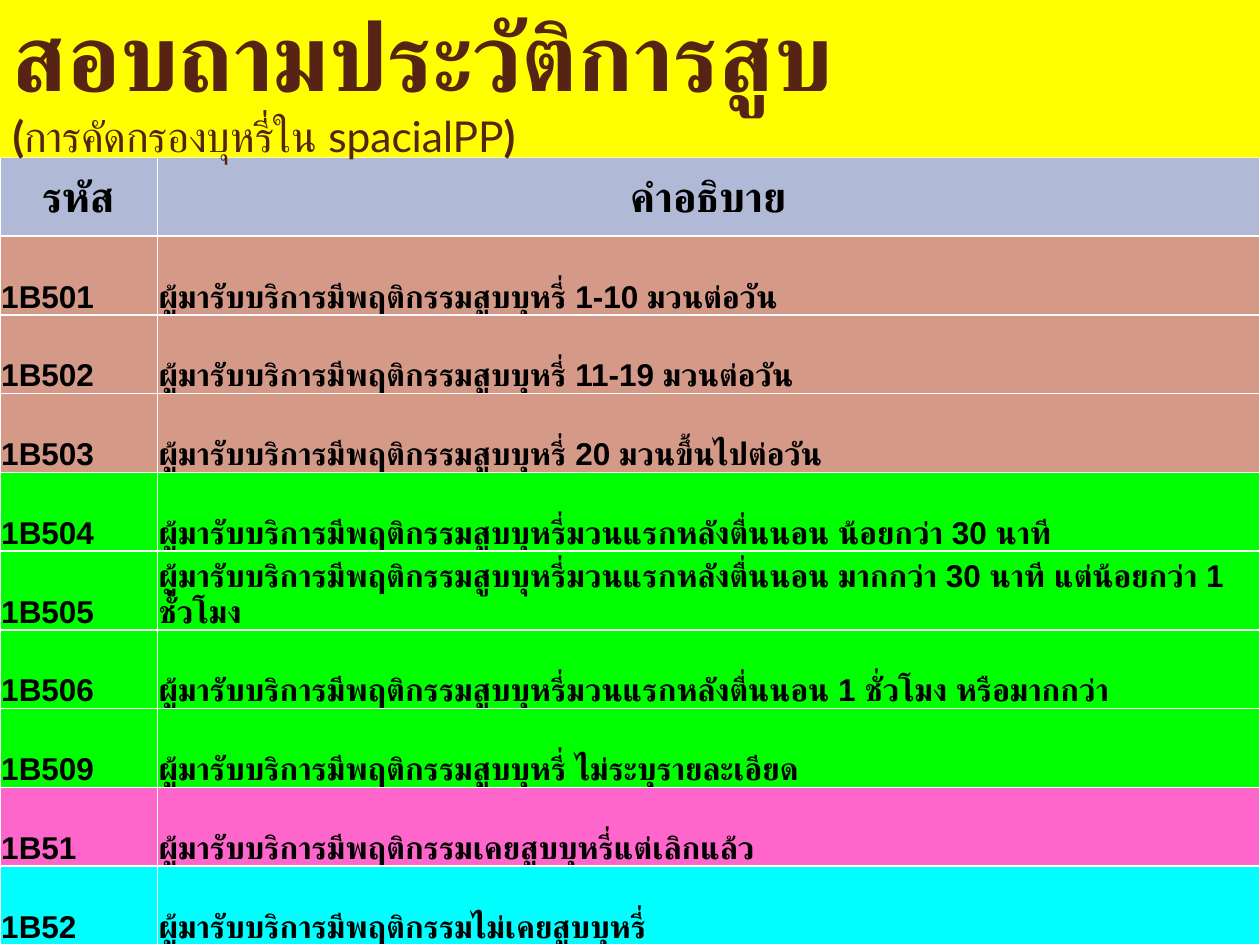
from lxml import etree
from pptx import Presentation
from pptx.dml.color import RGBColor
from pptx.enum.text import MSO_ANCHOR as Anchor, MSO_AUTO_SIZE as AutoSize, PP_ALIGN as Align
from pptx.oxml.ns import qn
from pptx.util import Inches, Pt

COLORS = {
    "title_bg": "FFFF00", "title": "572314", "text": "000000", "border": "FFFFFF",
    "header": "B0BAD7", "amount": "D59988", "first": "00FF00",
    "quit": "FF66CC", "never": "00FFFF",
}
SMOKES = "ผู้มารับบริการมีพฤติกรรมสูบบุหรี่"
FIRST = SMOKES + "มวนแรกหลังตื่นนอน "
ROWS = [
    ("รหัส", "คำอธิบาย", "header"),
    ("1B501", SMOKES + " 1-10 มวนต่อวัน", "amount"),
    ("1B502", SMOKES + " 11-19 มวนต่อวัน", "amount"),
    ("1B503", SMOKES + " 20 มวนขึ้นไปต่อวัน", "amount"),
    ("1B504", FIRST + "น้อยกว่า 30 นาที", "first"),
    ("1B505", FIRST + "มากกว่า 30 นาที แต่น้อยกว่า 1 ชั่วโมง", "first"),
    ("1B506", FIRST + "1 ชั่วโมง หรือมากกว่า", "first"),
    ("1B509", SMOKES + " ไม่ระบุรายละเอียด", "first"),
    ("1B51", "ผู้มารับบริการมีพฤติกรรมเคยสูบบุหรี่แต่เลิกแล้ว", "quit"),
    ("1B52", "ผู้มารับบริการมีพฤติกรรมไม่เคยสูบบุหรี่", "never"),
]


def rgb(name):
    return RGBColor.from_string(COLORS[name])


class SlideBuilder:
    title_font, table_font = "Lato", "Arial"

    def __init__(self, prs):
        self.s = prs.slides.add_slide(prs.slide_layouts[5])

    def run(self, p, text, size, font, color, bold=True):
        r = p.add_run()
        r.text = text
        r.font.size, r.font.bold, r.font.name = Pt(size), bold, font
        r.font.color.rgb = rgb(color)
        # Thai letters take the complex-script font
        etree.SubElement(r.font._element, qn("a:cs"), typeface=font)

    def borders(self, cell):
        tcPr = cell._tc.get_or_add_tcPr()
        for i, side in enumerate(("lnL", "lnR", "lnT", "lnB")):
            ln = etree.Element(qn("a:" + side), w=str(Pt(1)))
            fill = etree.SubElement(ln, qn("a:solidFill"))
            etree.SubElement(fill, qn("a:srgbClr"), val=COLORS["border"])
            tcPr.insert(i, ln)

    def cell(self, cell, text, fill):
        header = fill == "header"
        cell.fill.solid()
        cell.fill.fore_color.rgb = rgb(fill)
        cell.margin_left = cell.margin_right = cell.margin_top = Inches(0.01)
        cell.margin_bottom = 0
        cell.vertical_anchor = Anchor.MIDDLE if header else Anchor.BOTTOM
        p = cell.text_frame.paragraphs[0]
        p.alignment = Align.CENTER if header else Align.LEFT
        self.run(p, text, 24 if header else 18, self.table_font, "text")
        self.borders(cell)

    def table(self, rows, x, y, widths, height):
        frame = self.s.shapes.add_table(len(rows), len(widths), Inches(x), Inches(y),
                                        Inches(sum(widths)), Inches(height))
        for column, width in zip(frame.table.columns, widths):
            column.width = Inches(width)
        for i, (*texts, fill) in enumerate(rows):
            for j, text in enumerate(texts):
                self.cell(frame.table.cell(i, j), text, fill)

    def title(self, heading, note, x, y, w, h):
        sp = self.s.shapes.title
        sp.left, sp.top, sp.width, sp.height = map(Inches, (x, y, w, h))
        sp.fill.solid()
        sp.fill.fore_color.rgb = rgb("title_bg")
        tf = sp.text_frame
        tf.word_wrap, tf.auto_size = True, AutoSize.NONE
        tf.vertical_anchor = Anchor.MIDDLE
        p = tf.paragraphs[0]
        p.alignment = Align.LEFT
        self.run(p, heading, 54, self.title_font, "title")
        p.add_line_break()
        for text, bold in (("(", True), (note, False), (")", True)):
            self.run(p, text, 24.3, self.title_font, "title", bold)
        # Title lies in front of the table
        sp.element.getparent().append(sp.element)


def main():
    prs = Presentation()
    prs.slide_width, prs.slide_height = Inches(10), Inches(7.5)
    slide = SlideBuilder(prs)
    # Smoking history codes
    slide.table(ROWS, 0, 1.25, (1.25, 8.75), 6.25)
    # Title band
    slide.title("สอบถามประวัติการสูบ", "การคัดกรองบุหรี่ใน spacialPP", 0, 0, 10, 1.25)
    prs.save("out.pptx")


if __name__ == "__main__":
    main()
